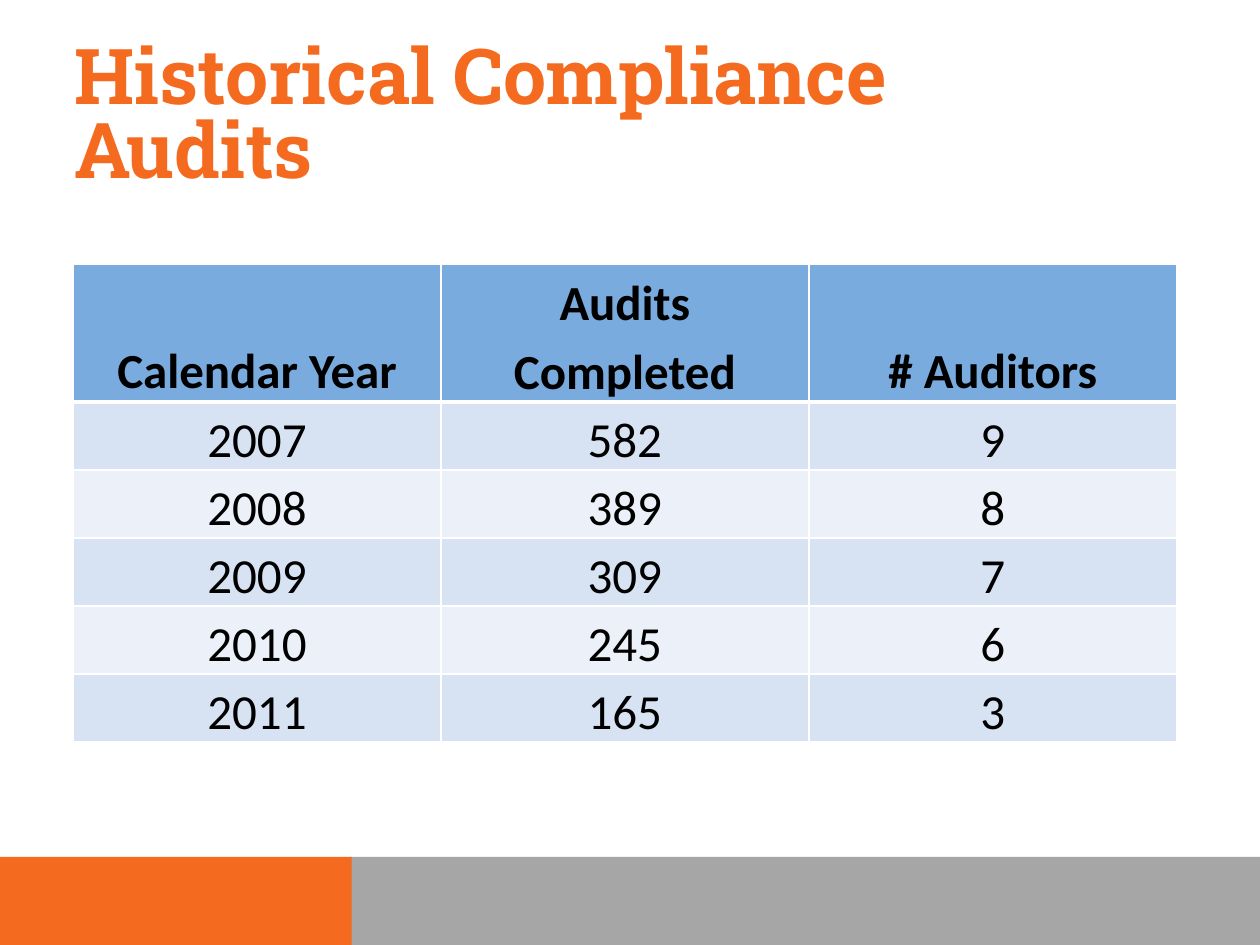
"""Build a slide with a table of historical compliance audits."""
import lxml.etree
import pptx
import pptx.dml.color
import pptx.enum.shapes
import pptx.enum.text
import pptx.oxml.ns
import pptx.util

Inches = pptx.util.Inches
Pt = pptx.util.Pt
RGBColor = pptx.dml.color.RGBColor

THEME = {
    "orange": RGBColor.from_string("F46A1F"),
    "gray": RGBColor.from_string("A6A6A6"),
    "header": RGBColor.from_string("7AABDE"),
    "bands": [RGBColor.from_string("ECF1F9"), RGBColor.from_string("D7E2F2")],
    "text": RGBColor.from_string("000000"),
    "border": "FFFFFF",
    "title_font": "Roboto Slab",
    "body_font": "Calibri",
    "title_size": Pt(44),
    "title_spacing": Pt(42),
    "body_size": Pt(28),
}

AUDITS = [
    ("Calendar Year", "Audits Completed", "# Auditors"),
    ("2007", "582", "9"),
    ("2008", "389", "8"),
    ("2009", "309", "7"),
    ("2010", "245", "6"),
    ("2011", "165", "3"),
]


def add_run(paragraph, text, font_name, size, color, bold):
    run = paragraph.add_run()
    run.text = text
    run.font.name = font_name
    run.font.size = size
    run.font.color.rgb = color
    run.font.bold = bold


def add_borders(cell, widths):
    properties = cell._tc.get_or_add_tcPr()
    for position, (side, width) in enumerate(widths.items()):
        line = lxml.etree.Element(pptx.oxml.ns.qn(f"a:ln{side}"), w=str(Pt(width)))
        fill = lxml.etree.SubElement(line, pptx.oxml.ns.qn("a:solidFill"))
        lxml.etree.SubElement(fill, pptx.oxml.ns.qn("a:srgbClr"), val=THEME["border"])
        properties.insert(position, line)


presentation = pptx.Presentation()
presentation.slide_width = Inches(10)
presentation.slide_height = Inches(7.5)
slide = presentation.slides.add_slide(presentation.slide_layouts[6])

for left, width, color in [(2.78, 7.22, "gray"), (0, 2.79, "orange")]:
    footer = slide.shapes.add_shape(
        pptx.enum.shapes.MSO_SHAPE.RECTANGLE,
        Inches(left), Inches(6.8), Inches(width), Inches(0.7),
    )
    footer.shadow.inherit = False
    footer.fill.solid()
    footer.fill.fore_color.rgb = THEME[color]
    footer.line.fill.background()

title = slide.shapes.add_textbox(Inches(0.49), Inches(0.32), Inches(8.4), Inches(1.25))
title.text_frame.word_wrap = True
paragraph = title.text_frame.paragraphs[0]
paragraph.line_spacing = THEME["title_spacing"]
add_run(paragraph, "Historical Compliance Audits", THEME["title_font"],
        THEME["title_size"], THEME["orange"], True)

table = slide.shapes.add_table(
    len(AUDITS), len(AUDITS[0]), Inches(0.58), Inches(2.1), Inches(8.76), Inches(3.76)
).table
for column in table.columns:
    column.width = Inches(2.92)

for row_index, values in enumerate(AUDITS):
    is_header = row_index == 0
    table.rows[row_index].height = Inches(1.09 if is_header else 0.54)
    for column_index, value in enumerate(values):
        cell = table.cell(row_index, column_index)
        cell.margin_left = cell.margin_right = Inches(0.07)
        cell.margin_top = cell.margin_bottom = 0
        if is_header or column_index < 2:
            cell.vertical_anchor = pptx.enum.text.MSO_ANCHOR.BOTTOM
        else:
            cell.vertical_anchor = pptx.enum.text.MSO_ANCHOR.TOP
        cell.fill.solid()
        cell.fill.fore_color.rgb = THEME["header"] if is_header else THEME["bands"][row_index % 2]
        add_borders(cell, {"L": 1, "R": 1, "T": 3 if row_index == 1 else 1,
                           "B": 3 if is_header else 1})
        paragraph = cell.text_frame.paragraphs[0]
        paragraph.alignment = pptx.enum.text.PP_ALIGN.CENTER
        paragraph.line_spacing = 1.15
        add_run(paragraph, value, THEME["body_font"], THEME["body_size"],
                THEME["text"], is_header)

presentation.save("out.pptx")
